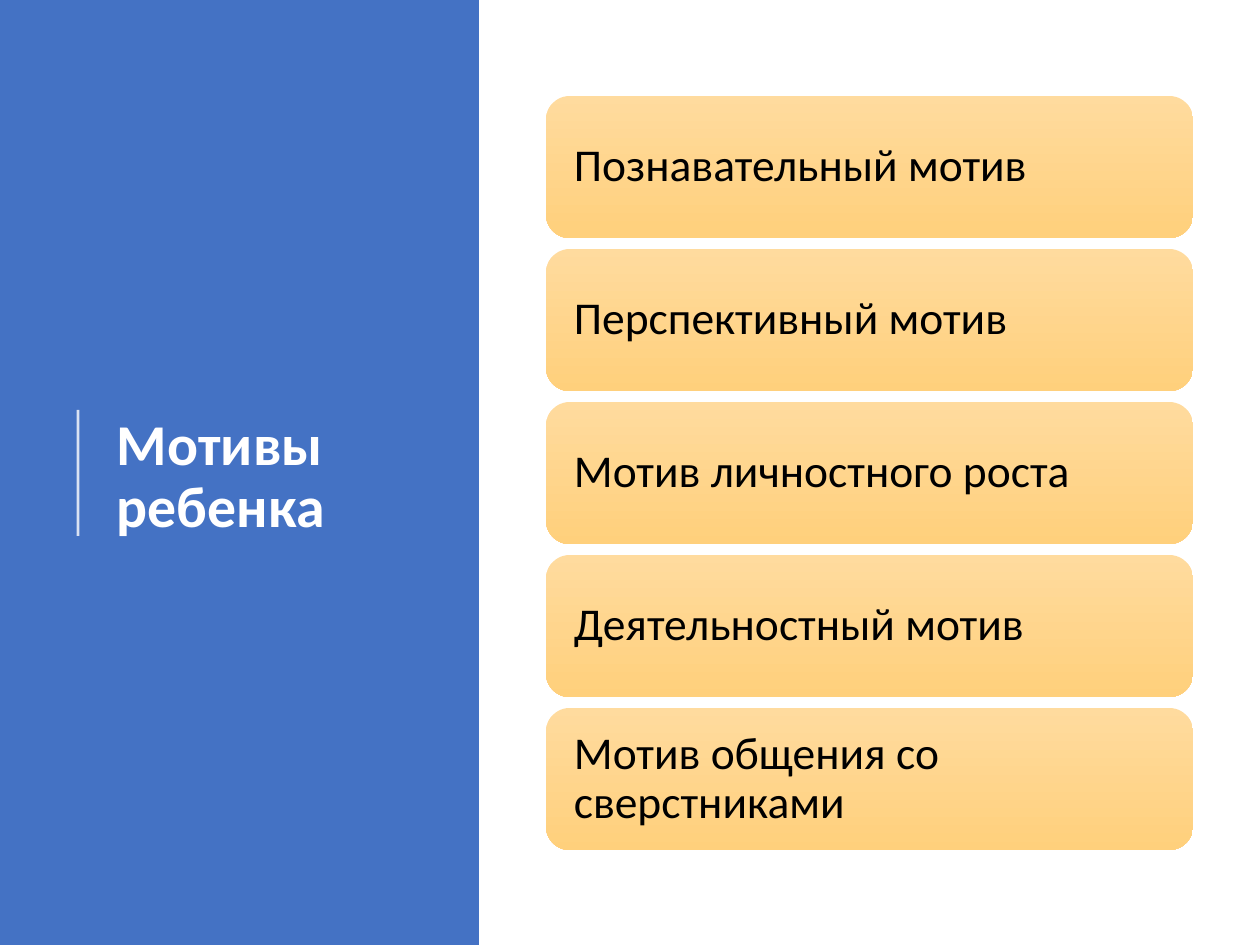
import pptx
import pptx.dml.color
import pptx.enum.shapes
import pptx.enum.text
import pptx.oxml
import pptx.oxml.ns
import pptx.util

EMU_PER_PX = 914400 / 126
SHAPES = pptx.enum.shapes.MSO_SHAPE

MOTIVES = [
    "Познавательный мотив",
    "Перспективный мотив",
    "Мотив личностного роста",
    "Деятельностный мотив",
    "Мотив общения со сверстниками",
]
CARD_LEFT, CARD_TOP, CARD_WIDTH, CARD_HEIGHT = 546, 96, 647, 142
CARD_PITCH = 153


def px(length):
    return pptx.util.Emu(round(length * EMU_PER_PX))


def rgb(value):
    return pptx.dml.color.RGBColor.from_string(value)


class MotivesPage:
    """Holds the style and the current slide."""

    font = "Calibri"
    accent = "4472C4"
    light = "FFFFFF"
    dark = "000000"
    card_gradient = ("FFDB9E", "FFD07C")

    def __init__(self, deck):
        self.page = deck.slides.add_slide(deck.slide_layouts[6])

    def shape(self, kind, left, top, width, height):
        shape = self.page.shapes.add_shape(
            kind, px(left), px(top), px(width), px(height))
        shape.shadow.inherit = False
        shape.line.fill.background()
        return shape

    def panel(self, left, top, width, height):
        panel = self.shape(SHAPES.RECTANGLE, left, top, width, height)
        panel.fill.solid()
        panel.fill.fore_color.rgb = rgb(self.accent)

    def rule(self, x, start, end):
        """Draw a vertical line, 80 % opaque."""
        rule = self.page.shapes.add_connector(
            pptx.enum.shapes.MSO_CONNECTOR.STRAIGHT,
            px(x), px(start), px(x), px(end))
        rule.line.width = pptx.util.Pt(1.5)
        rule.line.color.rgb = rgb(self.light)
        properties = rule._element.spPr
        namespace = pptx.oxml.ns.nsdecls("a")
        color = properties.find(".//" + pptx.oxml.ns.qn("a:srgbClr"))
        color.append(pptx.oxml.parse_xml(f'<a:alpha {namespace} val="80000"/>'))
        properties.append(pptx.oxml.parse_xml(f"<a:effectLst {namespace}/>"))

    def set_text(self, box, text, size, color, margin, bold=False):
        frame = box.text_frame
        frame.word_wrap = True
        frame.vertical_anchor = pptx.enum.text.MSO_ANCHOR.MIDDLE
        frame.margin_left = frame.margin_right = px(margin)
        para = frame.paragraphs[0]
        para.text = text
        para.alignment = pptx.enum.text.PP_ALIGN.LEFT
        para.line_spacing = 0.9
        para.font.name = self.font
        para.font.size = pptx.util.Pt(size)
        para.font.bold = bold
        para.font.color.rgb = rgb(color)

    def title(self, text, left, top, width, height):
        box = self.page.shapes.add_textbox(
            px(left), px(top), px(width), px(height))
        self.set_text(box, text, 33, self.light, 20, bold=True)

    def card(self, text, left, top, width, height):
        card = self.shape(SHAPES.ROUNDED_RECTANGLE, left, top, width, height)
        card.fill.gradient()
        card.fill.gradient_angle = 270
        for stop, color in zip(card.fill.gradient_stops, self.card_gradient):
            stop.color.rgb = rgb(color)
        self.set_text(card, text, 26, self.dark, 21)


def main():
    deck = pptx.Presentation()
    deck.slide_width, deck.slide_height = px(1260), px(945)
    page = MotivesPage(deck)
    page.panel(0, 0, 479, 945)
    page.rule(78, 536, 410)
    page.title("Мотивы ребенка", 97, 98, 348, 759)
    for row, motive in enumerate(MOTIVES):
        page.card(motive, CARD_LEFT, CARD_TOP + row * CARD_PITCH,
                  CARD_WIDTH, CARD_HEIGHT)
    deck.save("out.pptx")


if __name__ == "__main__":
    main()
